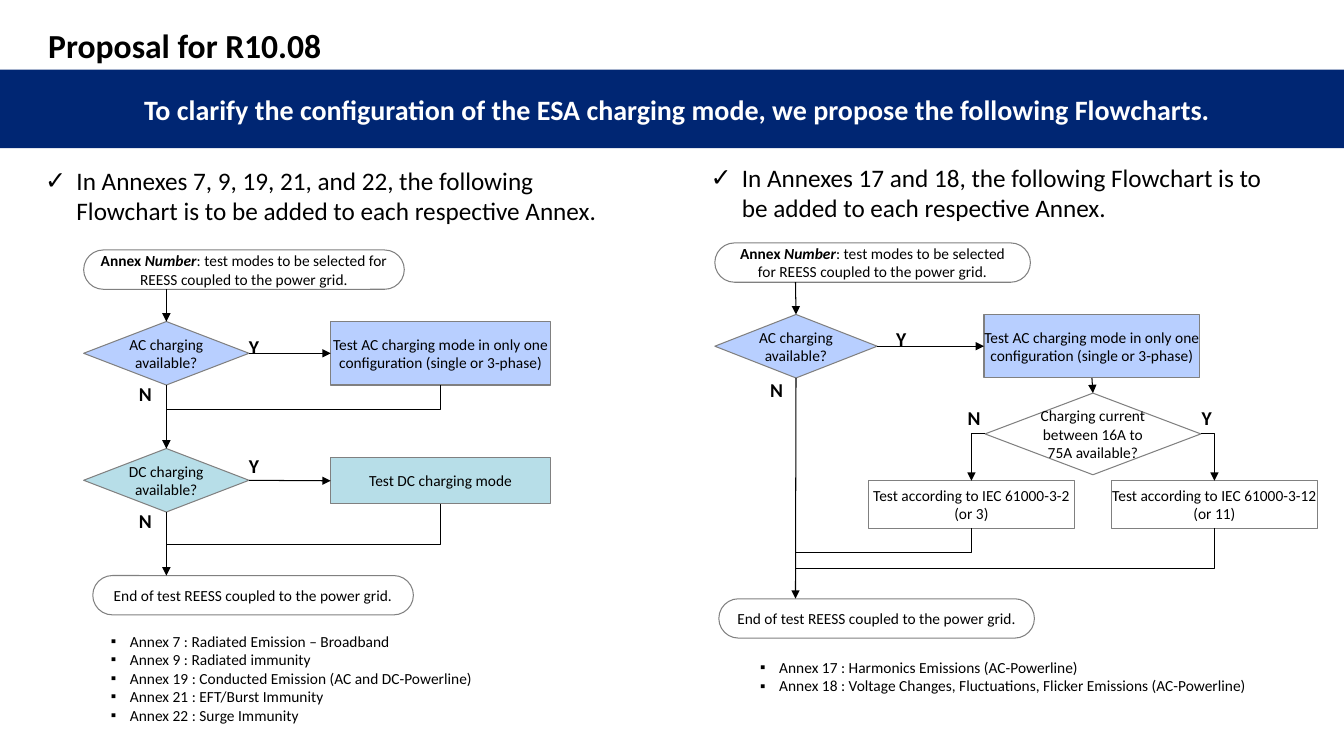
from dataclasses import dataclass

from lxml import etree
from pptx import Presentation
from pptx.dml.color import RGBColor
from pptx.enum.shapes import MSO_CONNECTOR, MSO_SHAPE
from pptx.enum.text import MSO_ANCHOR, MSO_AUTO_SIZE, PP_ALIGN
from pptx.oxml.ns import qn
from pptx.util import Emu, Pt

SCALE = 9144
STRAIGHT = MSO_CONNECTOR.STRAIGHT
RECT, ROUND, DIAMOND = MSO_SHAPE.RECTANGLE, MSO_SHAPE.ROUNDED_RECTANGLE, MSO_SHAPE.DIAMOND
LEFT, CENTER = PP_ALIGN.LEFT, PP_ALIGN.CENTER
MIDDLE = MSO_ANCHOR.MIDDLE
GROW = MSO_AUTO_SIZE.SHAPE_TO_FIT_TEXT
TOP, WEST, BASE, EAST = range(4)
SIDES = ((0.5, 0), (0, 0.5), (0.5, 1), (1, 0.5))
TIGHT = dict.fromkeys(("margin_left", "margin_top", "margin_right", "margin_bottom"), 0)
BOLD = {"bold": True}


@dataclass(frozen=True)
class Theme:
    """Colours, font and type sizes of the slide."""
    font: str = "Calibri"
    ink: str = "000000"
    paper: str = "FFFFFF"
    navy: str = "002673"
    blue: str = "B8CFFF"
    teal: str = "B7DEE8"
    edge: str = "808080"
    title: int = 24
    banner: int = 20
    lead: int = 18
    label: int = 14
    body: int = 11
    rule: float = 0.75


THEME = Theme()
START = [("Annex ", BOLD), ("Number", {"bold": True, "italic": True}),
         (": test modes to be selected for REESS coupled to the power grid.", {})]
FINISH = "End of test REESS coupled to the power grid."


def px(count):
    """Turn px into EMU."""
    return Emu(round(count * SCALE))


def assign(target, values):
    """Set each attribute named in values."""
    for name, value in values.items():
        setattr(target, name, value)


def write(frame, lines, size, color=THEME.ink, align=LEFT, look=None):
    """Write lines, each a string or a list of (text, format) runs."""
    for index, line in enumerate(lines):
        para = frame.paragraphs[0] if index == 0 else frame.add_paragraph()
        para.alignment = align
        for text, values in [(line, look or {})] if isinstance(line, str) else line:
            run = para.add_run()
            run.text = text
            assign(run.font, {"name": THEME.font, "size": Pt(size), **values})
            run.font.color.rgb = RGBColor.from_string(color)


def note(parts, box, lines, size, look=None, wrap=False, mark=None, indent=0):
    """Add a text box, with hanging marks if a mark is given."""
    frame = parts.add_textbox(*map(px, box)).text_frame
    assign(frame, {"word_wrap": wrap, "auto_size": GROW})
    write(frame, lines, size, look=look)
    if mark:
        for para in frame.paragraphs:
            props = para._p.get_or_add_pPr()
            props.set("marL", str(px(indent)))
            props.set("indent", str(-px(indent)))
            etree.SubElement(props, qn("a:buFont")).set("typeface", "Arial")
            etree.SubElement(props, qn("a:buChar")).set("char", mark)


def node(parts, kind, box, lines, fill=THEME.paper):
    """Add one outlined flowchart node."""
    shape = parts.add_shape(kind, *map(px, box))
    shape.shadow.inherit = False
    shape.fill.solid()
    shape.fill.fore_color.rgb = RGBColor.from_string(fill)
    shape.line.color.rgb = RGBColor.from_string(THEME.edge)
    shape.line.width = Pt(THEME.rule)
    if kind == ROUND:
        shape.adjustments[0] = 0.5
    assign(shape.text_frame, {"word_wrap": True, "vertical_anchor": MIDDLE,
                              **({} if kind == ROUND else TIGHT)})
    write(shape.text_frame, lines, THEME.body, align=CENTER)
    return shape


def spot(pin):
    """Give the point of a pin, which is (x, y) in px or (node, side)."""
    first, second = pin
    if isinstance(first, int):
        return px(first), px(second)
    across, down = SIDES[second]
    return round(first.left + first.width * across), round(first.top + first.height * down)


def wire(parts, start, end, bend=None, arrow=True):
    """Link two pins straight, or with a bend that goes across or down first."""
    (left, top), (right, base) = spot(start), spot(end)
    if bend == "down":
        mid, level = (left + right) // 2, (top + base) // 2
        reach, drop = (left - right) // 2, (base - top) // 2
        left, right, top, base = mid - drop, mid + drop, level - reach, level + reach
    line = parts.add_connector(STRAIGHT, left, top, right, base)
    props = line._element.spPr
    if bend:
        props.find(qn("a:prstGeom")).set("prst", "bentConnector2")
    else:
        for pin, join in ((start, line.begin_connect), (end, line.end_connect)):
            if not isinstance(pin[0], int):
                join(*pin)
    if bend == "down":
        props.find(qn("a:xfrm")).set("rot", "5400000")
    line.line.color.rgb = RGBColor.from_string(THEME.ink)
    line.line.width = Pt(THEME.rule)
    if arrow:
        etree.SubElement(props.get_or_add_ln(), qn("a:tailEnd")).set("type", "triangle")
    etree.SubElement(props, qn("a:effectLst"))


def labels(parts, box, items):
    """Add the Y and N labels at offsets in the box."""
    for text, left, top, width in items:
        note(parts, (box[0] + left, box[1] + top, width, 34), [text], THEME.label, BOLD)


def banner(slide, box):
    """Add the message band."""
    shape = slide.shapes.add_shape(RECT, *map(px, box))
    shape.shadow.inherit = False
    shape.fill.solid()
    shape.fill.fore_color.rgb = RGBColor.from_string(THEME.navy)
    shape.line.fill.background()
    assign(shape.text_frame, {"word_wrap": True, "vertical_anchor": MIDDLE, "margin_left": px(20)})
    write(shape.text_frame, ["To clarify the configuration of the ESA charging mode, "
                             "we propose the following Flowcharts."],
          THEME.banner, THEME.paper, CENTER, BOLD)
    shape.text_frame.paragraphs[0].space_after = Pt(10)


def frame_flow(parts, box, pill, gem, task, inset):
    """Add the start, AC step and end; return the AC nodes and the end pin."""
    x, y, _, height = box
    stem = x + gem // 2
    node(parts, ROUND, (x, y, pill, 39), [START])
    ask = node(parts, DIAMOND, (x, y + 71, gem, 63), ["AC charging available?"], THEME.blue)
    test = node(parts, RECT, (x + task[0], y + 71, task[1], 63),
                ["Test AC charging mode in only one configuration (single or 3-phase)"], THEME.blue)
    node(parts, ROUND, (x + inset, y + height - 39, pill, 39), [FINISH])
    wire(parts, (stem, y + 39), (ask, TOP))
    wire(parts, (ask, EAST), (test, WEST))
    return ask, test, (stem, y + height - 39)


def dual_flow(slide, box):
    """Add the flowchart with an AC step and a DC step."""
    parts = slide.shapes.add_group_shape().shapes
    x, y, width, _ = box
    ask, test, end = frame_flow(parts, box, 318, 164, (width - 218, 218), 9)
    query = node(parts, DIAMOND, (x, y + 197, 164, 63), ["DC charging available?"], THEME.teal)
    task = node(parts, RECT, (x + width - 218, y + 206, 218, 46),
                ["Test DC charging mode"], THEME.teal)
    wire(parts, (ask, BASE), (query, TOP))
    wire(parts, (query, EAST), (task, WEST))
    wire(parts, (query, BASE), end)
    for source, level in ((test, 158), (task, 292)):
        wire(parts, (source, BASE), (end[0], y + level), "down", False)
    labels(parts, box, (("Y", 154, 79, 35), ("Y", 154, 197, 35),
                        ("N", 45, 126, 38), ("N", 45, 252, 38)))


def split_flow(slide, box):
    """Add the flowchart that splits by charging current."""
    parts = slide.shapes.add_group_shape().shapes
    x, y, width, _ = box
    ask, test, end = frame_flow(parts, box, 313, 161, (267, 214), 4)
    query = node(parts, DIAMOND, (x + 268, y + 149, 214, 81),
                 ["Charging current between 16A to 75A available?"])
    wire(parts, (ask, BASE), end)
    wire(parts, (test, BASE), (query, TOP))
    for left, side, level, lines in (
            (152, WEST, 307, ["Test according to IEC 61000-3-2", "(or 3)"]),
            (width - 205, EAST, 323, ["Test according to IEC 61000-3-12", "(or 11)"])):
        task = node(parts, RECT, (x + left, y + 236, 205, 47), lines)
        wire(parts, (query, side), (task, TOP), "across")
        wire(parts, (task, BASE), (end[0], y + level), "down", False)
    labels(parts, box, (("Y", 170, 78, 31), ("Y", 473, 157, 31),
                        ("N", 241, 157, 34), ("N", 45, 129, 34)))


def main():
    """Build the slide and save it."""
    deck = Presentation()
    assign(deck, {"slide_width": px(1333), "slide_height": px(750)})
    slide = deck.slides.add_slide(deck.slide_layouts[6])
    parts = slide.shapes
    note(parts, (38, 20, 1065, 47), ["Proposal for R10.08"], THEME.title, BOLD, True)
    banner(slide, (0, 69, 1333, 78))
    dual_flow(slide, (83, 248, 463, 362))
    split_flow(slide, (709, 241, 598, 392))
    for box, text in (((35, 159, 579, 71), "In Annexes 7, 9, 19, 21, and 22, the following "
                       "Flowchart is to be added to each respective Annex."),
                      ((695, 156, 579, 71), "In Annexes 17 and 18, the following "
                       "Flowchart is to be added to each respective Annex.")):
        note(parts, box, [text], THEME.lead, wrap=True, mark="✓", indent=31)
    for box, lines in (((100, 622, 381, 103), [
            "Annex 7 : Radiated Emission – Broadband", "Annex 9 : Radiated immunity",
            "Annex 19 : Conducted Emission (AC and DC-Powerline)",
            "Annex 21 : EFT/Burst Immunity", "Annex 22 : Surge Immunity"]),
            ((744, 648, 507, 47), [
                "Annex 17 : Harmonics Emissions (AC-Powerline)",
                "Annex 18 : Voltage Changes, Fluctuations, Flicker Emissions (AC-Powerline)"])):
        note(parts, box, lines, THEME.body, mark="▪", indent=19)
    deck.save("out.pptx")


if __name__ == "__main__":
    main()
